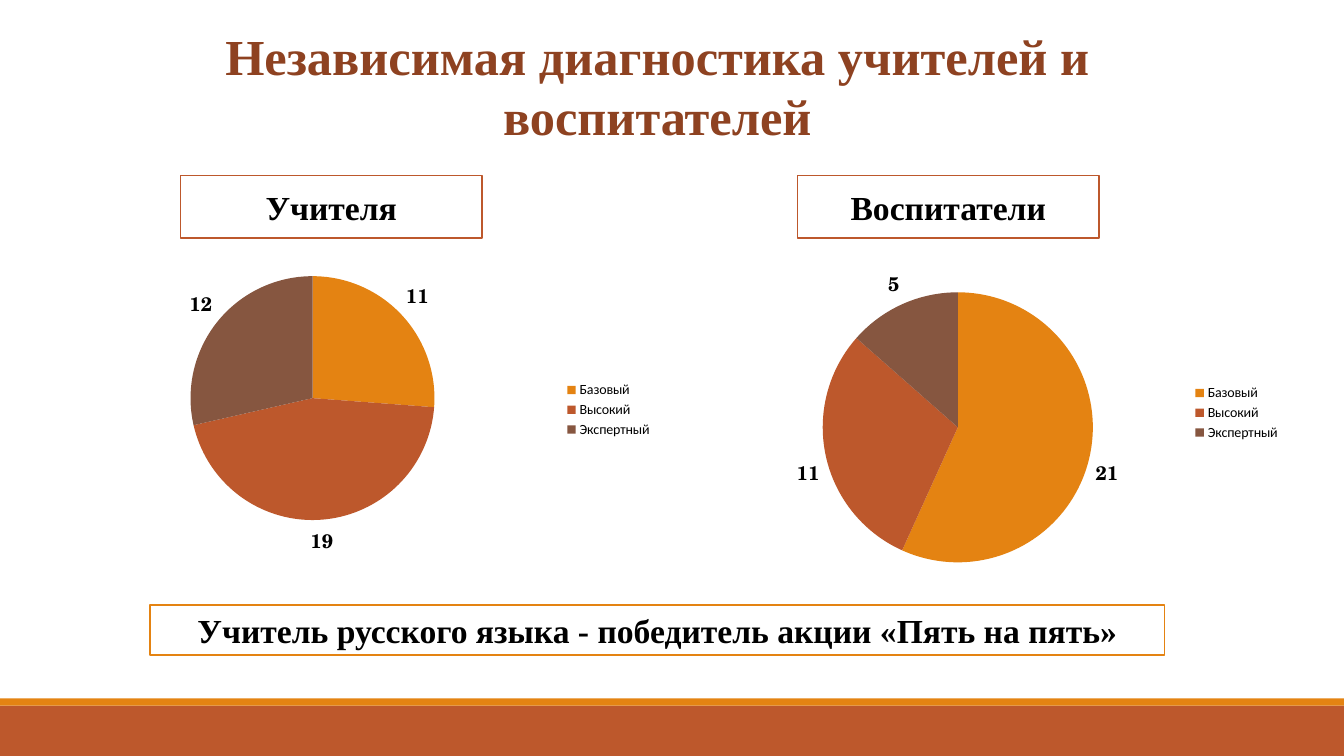
from lxml import etree
from pptx import Presentation
from pptx.chart.data import CategoryChartData
from pptx.dml.color import RGBColor
from pptx.enum.chart import XL_CHART_TYPE, XL_LABEL_POSITION, XL_LEGEND_POSITION
from pptx.enum.shapes import MSO_SHAPE
from pptx.enum.text import MSO_ANCHOR, PP_ALIGN
from pptx.oxml.ns import qn
from pptx.util import Inches, Pt

PIE = XL_CHART_TYPE.PIE
OUTSIDE_END = XL_LABEL_POSITION.OUTSIDE_END
LEGEND_RIGHT = XL_LEGEND_POSITION.RIGHT
RECTANGLE = MSO_SHAPE.RECTANGLE
MIDDLE = MSO_ANCHOR.MIDDLE
CENTER = PP_ALIGN.CENTER

WHITE = RGBColor(0xFF, 0xFF, 0xFF)
BLACK = RGBColor(0x00, 0x00, 0x00)
ORANGE = RGBColor(0xE4, 0x83, 0x12)
RUST = RGBColor(0xBD, 0x58, 0x2C)
BROWN = RGBColor(0x86, 0x56, 0x40)
TITLE_BROWN = RGBColor(0x8E, 0x42, 0x21)

TEXT_FONT = "Times New Roman"
LEGEND_FONT = "Calibri"
LABEL_FONT = "TeX Gyre Schola"
LEVELS = {"Базовый": ORANGE, "Высокий": RUST, "Экспертный": BROWN}

# heading, heading left, counts, chart box, pie left, pie top, pie diameter
GROUPS = [
    ("Учителя", 1.79, (11, 19, 12), (0.58, 2.47, 5.99, 3.19), 1.89, 2.74, 2.42),
    ("Воспитатели", 7.91, (21, 11, 5), (7.18, 2.47, 5.62, 3.25), 8.16, 2.9, 2.68),
]


def write_centered(text_frame, text, size, color):
    text_frame.text = text
    text_frame.word_wrap = True
    text_frame.vertical_anchor = MIDDLE
    paragraph = text_frame.paragraphs[0]
    paragraph.alignment = CENTER
    font = paragraph.runs[0].font
    font.name, font.size, font.bold = TEXT_FONT, Pt(size), True
    font.color.rgb = color


def add_title(slide, text):
    title = slide.shapes.title
    title.left, title.top = Inches(0.58), Inches(0.19)
    title.width, title.height = Inches(11.88), Inches(1.31)
    write_centered(title.text_frame, text, 36, TITLE_BROWN)


def add_rectangle(slide, box, fill):
    rectangle = slide.shapes.add_shape(RECTANGLE, *map(Inches, box))
    rectangle.shadow.inherit = False
    rectangle.fill.solid()
    rectangle.fill.fore_color.rgb = fill
    rectangle.line.fill.background()
    return rectangle


def add_framed_text(slide, box, text, border):
    frame = add_rectangle(slide, box, WHITE)
    frame.line.color.rgb = border
    frame.line.width = Pt(1.25)
    write_centered(frame.text_frame, text, 24, BLACK)


def place_pie(chart, box, pie_left, pie_top, diameter):
    """Fix the inner plot area, given in slide inches, within the chart box."""
    left, top, width, height = box
    plot_area = chart.plots[0]._element.getparent()
    layout = plot_area.find(qn("c:layout"))
    if layout is None:
        layout = etree.Element(qn("c:layout"))
        plot_area.insert(0, layout)
    manual = etree.SubElement(layout, qn("c:manualLayout"))
    settings = {
        "layoutTarget": "inner", "xMode": "edge", "yMode": "edge",
        "x": (pie_left - left) / width, "y": (pie_top - top) / height,
        "w": diameter / width, "h": diameter / height,
    }
    for tag, value in settings.items():
        etree.SubElement(manual, qn(f"c:{tag}")).set("val", str(value))


def add_level_pie(slide, counts, box, pie_left, pie_top, diameter):
    data = CategoryChartData()
    data.categories = list(LEVELS)
    data.add_series("Series 1", counts)
    chart = slide.shapes.add_chart(PIE, *map(Inches, box), data).chart
    chart.has_title = False
    chart.font.name, chart.font.size = LEGEND_FONT, Pt(10)
    chart.font.color.rgb = BLACK
    chart.has_legend = True
    chart.legend.position = LEGEND_RIGHT
    chart.legend.include_in_layout = False

    plot = chart.plots[0]
    plot.vary_by_categories = True
    for index, color in enumerate(LEVELS.values()):
        fill = plot.series[0].points[index].format.fill
        fill.solid()
        fill.fore_color.rgb = color

    labels = plot.series[0].data_labels
    labels.show_value = True
    labels.position = OUTSIDE_END
    labels.font.name, labels.font.size, labels.font.bold = LABEL_FONT, Pt(14), True
    labels.font.color.rgb = BLACK
    place_pie(chart, box, pie_left, pie_top, diameter)


def main():
    presentation = Presentation()
    presentation.slide_width = Inches(13.33)
    presentation.slide_height = Inches(7.5)
    slide = presentation.slides.add_slide(presentation.slide_layouts[5])

    add_rectangle(slide, (0, 7, 13.33, 0.5), RUST)
    add_rectangle(slide, (0, 6.93, 13.33, 0.07), ORANGE)
    add_title(slide, "Независимая диагностика учителей и воспитателей")
    for heading, heading_left, counts, box, *pie_place in GROUPS:
        add_level_pie(slide, counts, box, *pie_place)
        add_framed_text(slide, (heading_left, 1.74, 2.99, 0.62), heading, RUST)
    add_framed_text(slide, (1.49, 6, 10.06, 0.5),
                    "Учитель русского языка - победитель акции «Пять на пять»", ORANGE)
    presentation.save("out.pptx")


if __name__ == "__main__":
    main()
